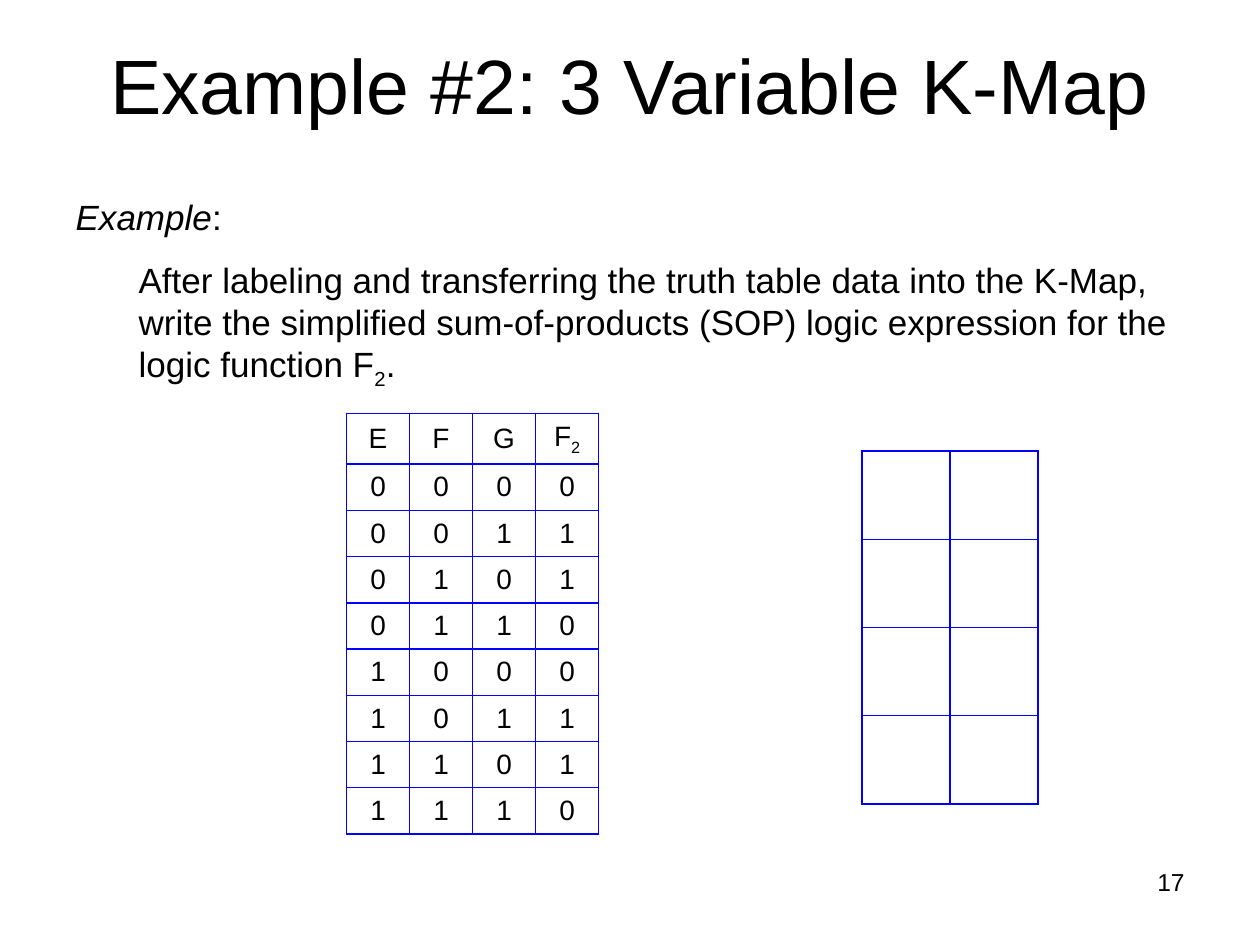
from pptx import Presentation
from pptx.dml.color import RGBColor
from pptx.enum.text import MSO_ANCHOR, MSO_AUTO_SIZE, PP_ALIGN
from pptx.oxml.ns import qn
from pptx.util import Inches, Pt
from lxml.etree import SubElement

BLACK, WHITE, BLUE = "000000", "FFFFFF", "0000FF"


def style(p, size):
    """Format every run of a paragraph; a run holding only "2" after text is a subscript."""
    for i, r in enumerate(p.runs):
        r.font.name = "Arial"
        r.font.size = Pt(size)
        r.font.color.rgb = RGBColor.from_string(BLACK)
        if i and r.text == "2":
            r.font._element.set("baseline", "-25000")


def set_borders(cell, sides):
    """Draw blue lines on the sides named in sides (letters of LRTB), none elsewhere."""
    tcPr = cell._tc.get_or_add_tcPr()
    for side in "LRTB":
        ln = SubElement(tcPr, qn(f"a:ln{side}"), w=str(Pt(1)))
        if side in sides:
            fill = SubElement(ln, qn("a:solidFill"))
            SubElement(fill, qn("a:srgbClr"), val=BLUE)
        else:
            SubElement(ln, qn("a:noFill"))


prs = Presentation()
prs.slide_width, prs.slide_height = Inches(10), Inches(7.5)
s = prs.slides.add_slide(prs.slide_layouts[1])

# Title
title = s.shapes.title
title.left, title.top, title.width, title.height = 0, 0, Inches(10), Inches(1.33)
tf = title.text_frame
tf.text = "Example #2: 3 Variable K-Map"
tf.vertical_anchor = MSO_ANCHOR.MIDDLE
tf.paragraphs[0].alignment = PP_ALIGN.CENTER
style(tf.paragraphs[0], 44)

# Problem statement
body = s.placeholders[1]
body.left, body.top = Inches(0.5), Inches(1.5)
body.width, body.height = Inches(8.92), Inches(1.6)
tf = body.text_frame
tf.auto_size = MSO_AUTO_SIZE.SHAPE_TO_FIT_TEXT
task = (
    "After labeling and transferring the truth table data into the K-Map, "
    "write the simplified sum-of-products (SOP) logic expression for the "
    "logic function F"
)
tf.add_paragraph()
for level, (p, texts) in enumerate(zip(tf.paragraphs, [("Example", ":"), (task, "2", ".")])):
    p.level = level
    p.space_before = Pt(0)
    pPr = p._p.get_or_add_pPr()
    pPr.set("marL", str(Inches(0.5 * level)))
    pPr.set("indent", "0")
    SubElement(pPr, qn("a:buNone"))
    for text in texts:
        p.add_run().text = text
    style(p, 20)
tf.paragraphs[0].space_after = Pt(12)
tf.paragraphs[0].runs[0].font.italic = True

# K-map: label row and column stay open, the grid is ruled
col_widths = [0.42, 0.7, 0.7]
row_heights = [0.4] + [0.7] * 4
kmap = s.shapes.add_table(5, 3, Inches(6.42), Inches(3.18), Inches(1.82), Inches(3.2)).table
kmap.first_row = kmap.horz_banding = False
for col, width in zip(kmap.columns, col_widths):
    col.width = Inches(width)
for row, height in zip(kmap.rows, row_heights):
    row.height = Inches(height)
for i in range(5):
    for j in range(3):
        cell = kmap.cell(i, j)
        if i and j:
            sides = "LRTB"
        elif i:
            sides = "R"
        else:
            sides = "B" if j else ""
        set_borders(cell, sides)
        cell.fill.background()

# Truth table: the inputs count up in binary
outputs = "01100110"
rows = [["E", "F", "G", "F"]]
rows += [list(f"{n:03b}" + out) for n, out in enumerate(outputs)]
truth = s.shapes.add_table(9, 4, Inches(2.75), Inches(3.28), Inches(2), Inches(3.3)).table
truth.first_row = truth.horz_banding = False
for i, values in enumerate(rows):
    for j, value in enumerate(values):
        cell = truth.cell(i, j)
        cell.text = value
        cell.vertical_anchor = MSO_ANCHOR.MIDDLE
        set_borders(cell, "LRTB")
        if i in (0, 8):
            cell.fill.solid()
            cell.fill.fore_color.rgb = RGBColor.from_string(WHITE)
        else:
            cell.fill.background()
        p = cell.text_frame.paragraphs[0]
        p.alignment = PP_ALIGN.CENTER
        if (i, j) == (0, 3):
            p.add_run().text = "2"
        style(p, 16)

# Slide number
number = s.shapes.add_textbox(Inches(7.17), Inches(6.83), Inches(2.33), Inches(0.52))
tf = number.text_frame
tf.word_wrap = True
tf.text = "17"
tf.paragraphs[0].alignment = PP_ALIGN.RIGHT
style(tf.paragraphs[0], 14)

prs.save("out.pptx")
